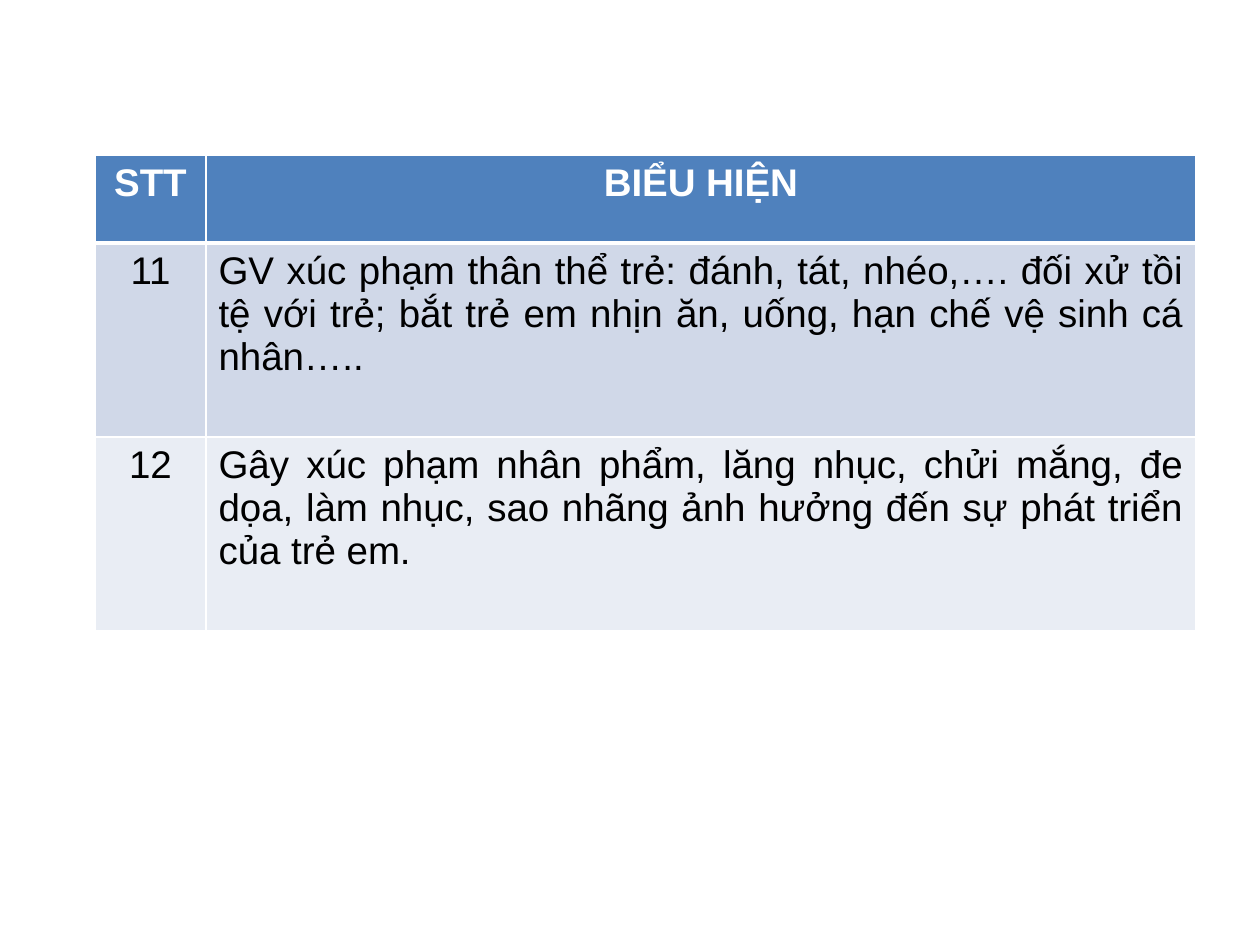
import pptx
import pptx.dml.color
import pptx.enum.text
import pptx.oxml
import pptx.oxml.ns
import pptx.util

EMU_PER_PX = 914400 / 126
ALIGN = pptx.enum.text.PP_ALIGN

COLUMN_WIDTHS = [111, 990]
ROW_HEIGHTS = [88, 194, 194]
ROW_FILLS = ["4F81BD", "D0D8E8", "E9EDF4"]
ROWS = [
    ("STT", "BIỂU HIỆN"),
    ("11", "GV xúc phạm thân thể trẻ: đánh, tát, nhéo,…. đối xử tồi tệ với trẻ; "
           "bắt trẻ em nhịn ăn, uống, hạn chế vệ sinh cá nhân….."),
    ("12", "Gây xúc phạm nhân phẩm, lăng nhục, chửi mắng, đe dọa, làm nhục, "
           "sao nhãng ảnh hưởng đến sự phát triển của trẻ em."),
]


def px(length):
    return pptx.util.Emu(round(length * EMU_PER_PX))


def rgb(color):
    return pptx.dml.color.RGBColor.from_string(color)


def set_borders(cell, widths, color="FFFFFF"):
    """Draw the cell's edges; widths maps L, R, T and B to points."""
    properties = cell._tc.get_or_add_tcPr()
    for side, width in widths.items():
        properties.append(pptx.oxml.parse_xml(
            f'<a:ln{side} {pptx.oxml.ns.nsdecls("a")} w="{pptx.util.Pt(width)}">'
            f'<a:solidFill><a:srgbClr val="{color}"/></a:solidFill></a:ln{side}>'
        ))


def fill_cell(cell, text, fill, color, bold, alignment):
    cell.fill.solid()
    cell.fill.fore_color.rgb = rgb(fill)
    cell.text = text
    paragraph = cell.text_frame.paragraphs[0]
    paragraph.alignment = alignment
    paragraph.font.name = "Arial"
    paragraph.font.size = pptx.util.Pt(22)
    paragraph.font.bold = bold
    paragraph.font.color.rgb = rgb(color)


def add_signs_table(slide, left, top):
    table = slide.shapes.add_table(
        len(ROWS), len(COLUMN_WIDTHS), px(left), px(top),
        px(sum(COLUMN_WIDTHS)), px(sum(ROW_HEIGHTS)),
    ).table
    for column, width in zip(table.columns, COLUMN_WIDTHS):
        column.width = px(width)
    for row, height in zip(table.rows, ROW_HEIGHTS):
        row.height = px(height)
    for i, (texts, fill) in enumerate(zip(ROWS, ROW_FILLS)):
        header = i == 0
        widths = {"L": 1, "R": 1, "T": 3 if i == 1 else 1, "B": 3 if header else 1}
        for j, text in enumerate(texts):
            cell = table.cell(i, j)
            set_borders(cell, widths)
            alignment = ALIGN.CENTER if header or j == 0 else ALIGN.JUSTIFY
            fill_cell(cell, text, fill, "FFFFFF" if header else "000000", header, alignment)


def main():
    presentation = pptx.Presentation()
    presentation.slide_width = px(1260)
    presentation.slide_height = px(945)
    slide = presentation.slides.add_slide(presentation.slide_layouts[6])
    add_signs_table(slide, 95, 155)
    presentation.save("out.pptx")


if __name__ == "__main__":
    main()
